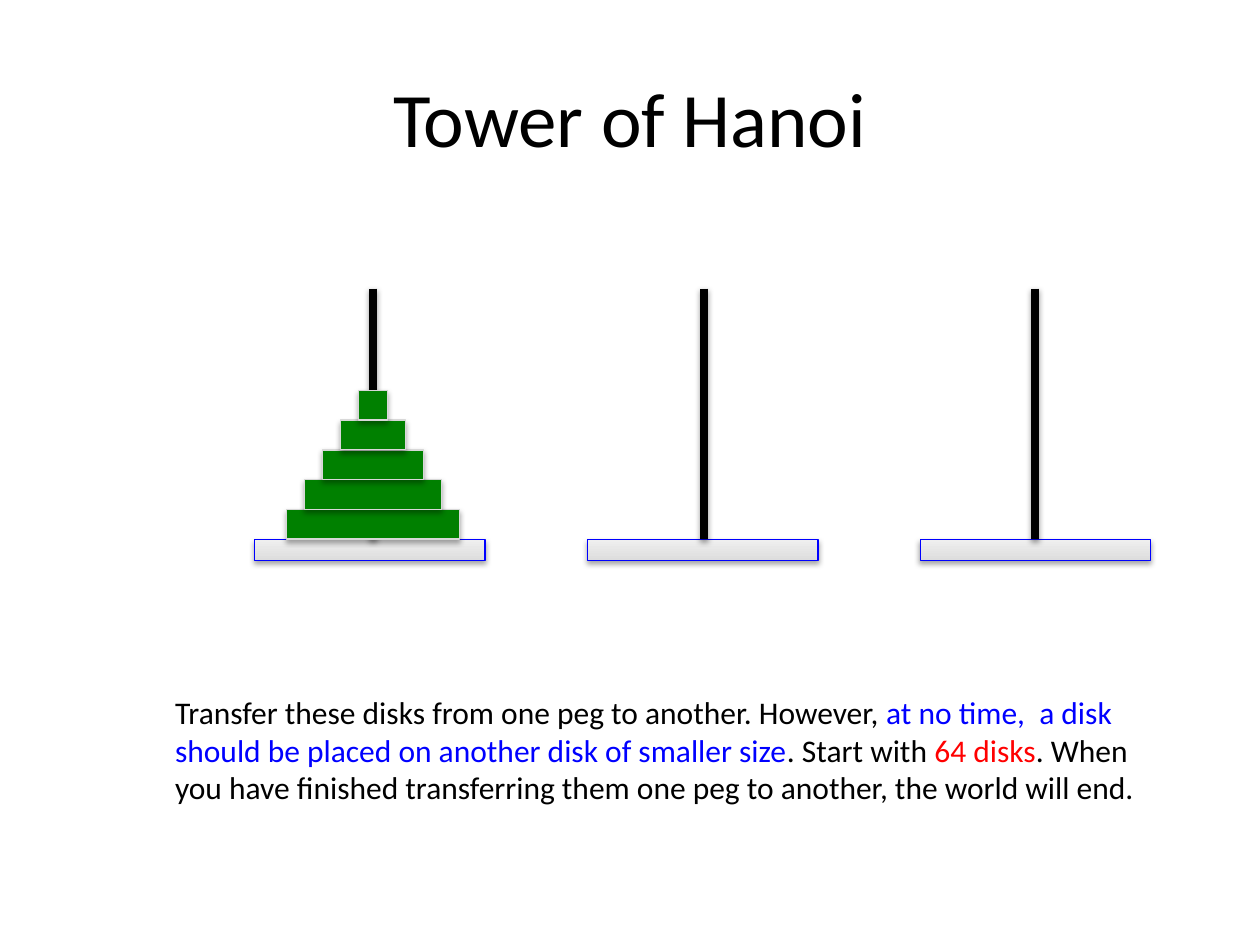
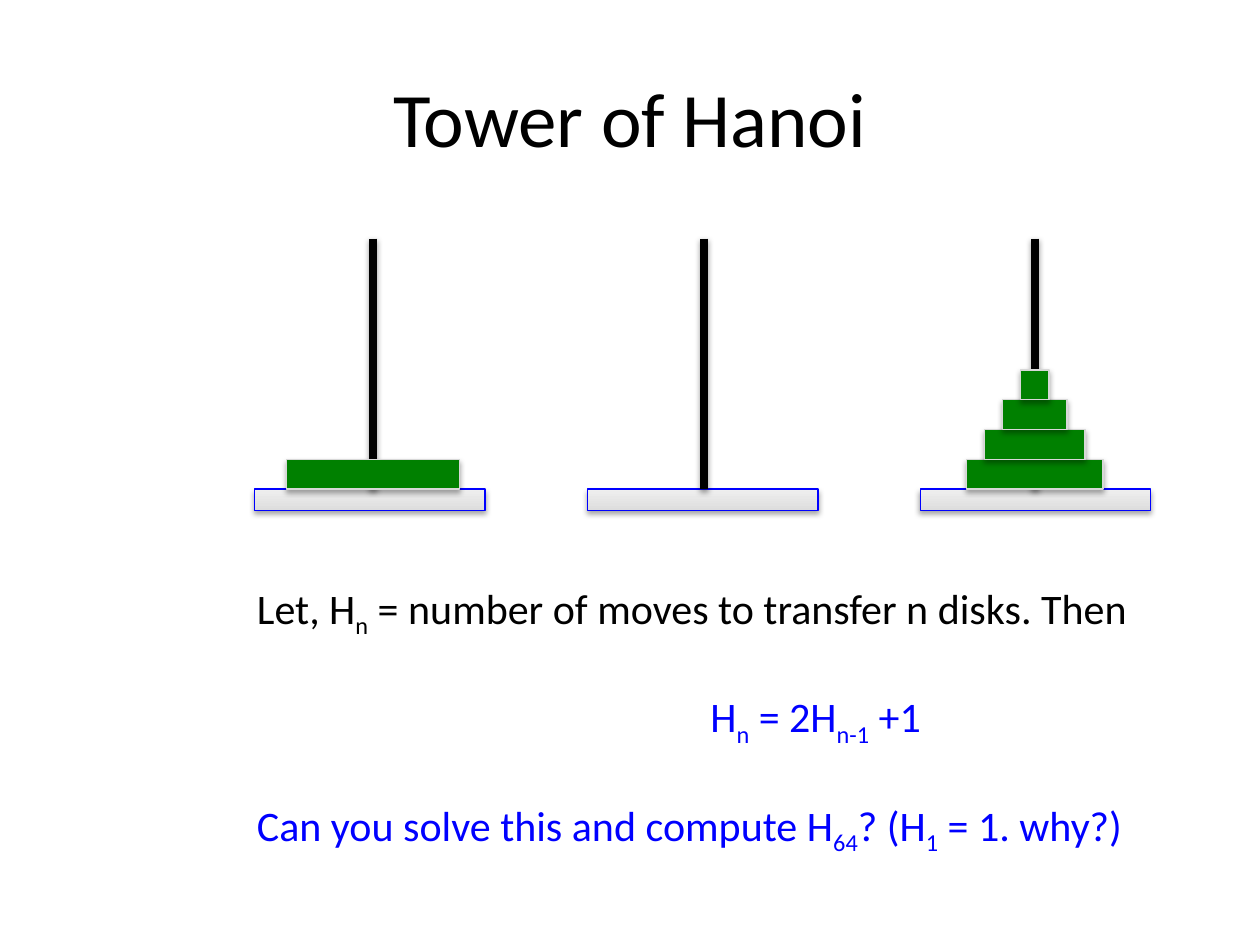
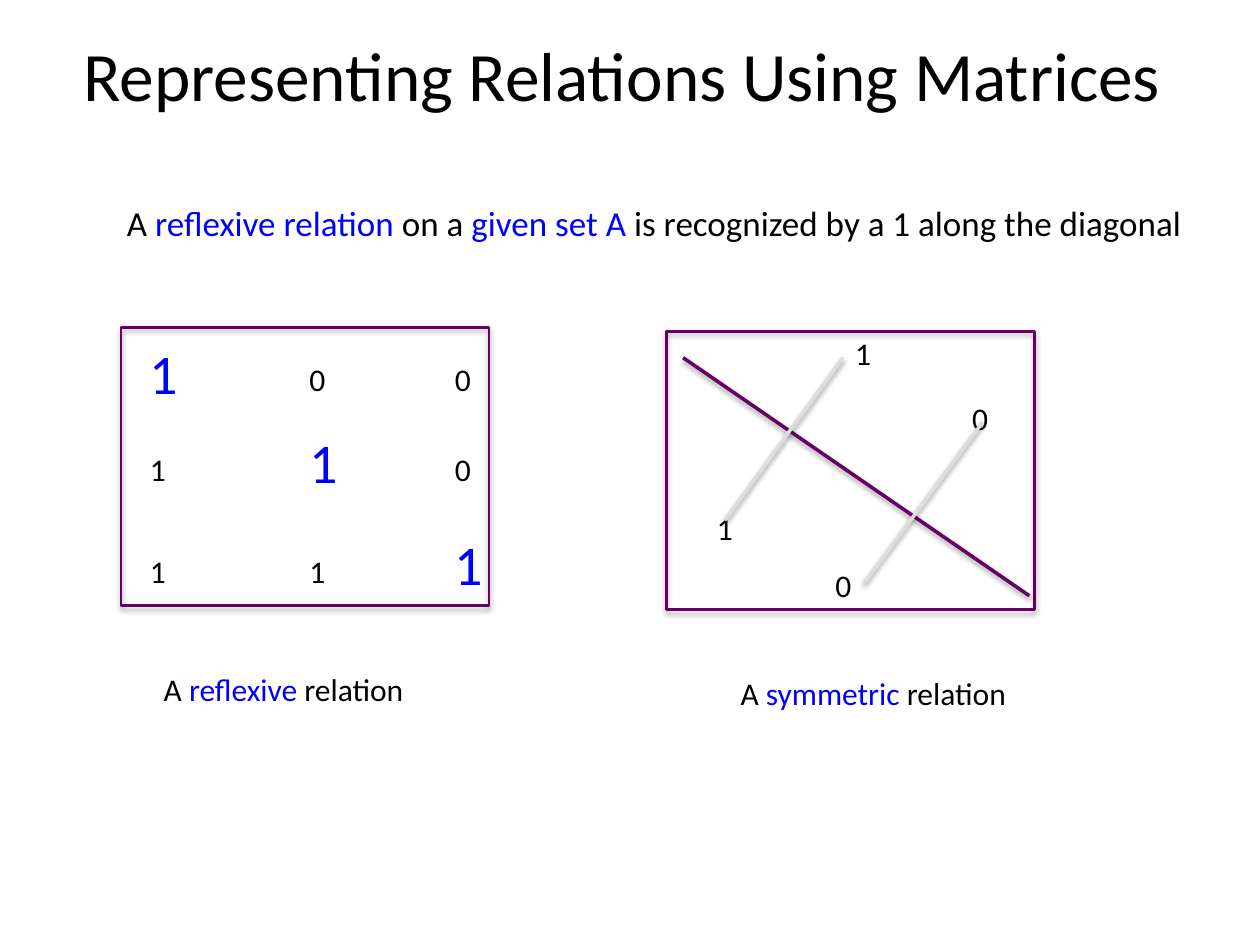
"""Build three slides on the Tower of Hanoi and on relations as matrices."""
from lxml import etree
from pptx import Presentation
from pptx.dml.color import RGBColor
from pptx.enum import shapes, text
from pptx.oxml import ns
from pptx.util import Cm, Pt

FONT = "Calibri"
BLACK = RGBColor(0x00, 0x00, 0x00)
BLUE = RGBColor(0x00, 0x00, 0xFF)
RED = RGBColor(0xFF, 0x00, 0x00)
GREEN = RGBColor(0x00, 0x80, 0x00)
PURPLE = RGBColor(0x66, 0x00, 0x66)
SILVER = RGBColor(0xDD, 0xDD, 0xDD)
PALE = RGBColor(0xEF, 0xEF, 0xEF)
EDGE = RGBColor(0xD8, 0xD8, 0xD8)

TITLE_PLACE = (1.27, 0.76, 22.86, 3.18)
CENTERED = dict(align=text.PP_ALIGN.CENTER, anchor=text.MSO_ANCHOR.MIDDLE)
RECTANGLE = shapes.MSO_SHAPE.RECTANGLE
STRAIGHT = shapes.MSO_CONNECTOR.STRAIGHT


def add_text(page, place, paragraphs, size=18, align=text.PP_ALIGN.LEFT,
             anchor=text.MSO_ANCHOR.TOP, bottom=0.13, gap=0, indents=()):
    """Add a text box; each paragraph lists (words, colour[, subscript]) spans."""
    box = page.shapes.add_textbox(*map(Cm, place))
    frame = box.text_frame
    frame.word_wrap = True
    frame.vertical_anchor = anchor
    frame.margin_bottom = Cm(bottom)
    for index, spans in enumerate(paragraphs):
        para = frame.paragraphs[0] if index == 0 else frame.add_paragraph()
        para.alignment = align
        if index:
            para.space_before = Pt(gap)
        if indents:
            para._p.get_or_add_pPr().set("marL", str(Cm(indents[index])))
        for words, colour, *subscript in spans:
            span = para.add_run()
            span.text = words
            span.font.name = FONT
            span.font.size = Pt(size)
            span.font.color.rgb = colour
            if subscript:
                span.font._element.set("baseline", "-25000")


def outline(shape, colour, width, distance=23000, alpha=35000):
    """Draw the line of a shape or connector and the soft shadow below it."""
    shape.line.color.rgb = colour
    shape.line.width = Pt(width)
    effects = etree.SubElement(shape._element.spPr, ns.qn("a:effectLst"))
    shadow = etree.SubElement(effects, ns.qn("a:outerShdw"), blurRad="40000",
                              dist=str(distance), dir="5400000", rotWithShape="0")
    shade = etree.SubElement(shadow, ns.qn("a:srgbClr"), val=str(BLACK))
    etree.SubElement(shade, ns.qn("a:alpha"), val=str(alpha))


deck = Presentation()
deck.slide_width, deck.slide_height = Cm(25.4), Cm(19.05)
pages = [deck.slides.add_slide(deck.slide_layouts[6]) for _ in range(3)]
hanoi_start, hanoi_moves, matrices = pages

DISK_HEIGHT = 0.6
DISK_WIDTHS = [3.48 - 0.725 * step for step in range(5)]
towers = (
    (hanoi_start, 10.87, (DISK_WIDTHS, [], [])),
    (hanoi_moves, 9.86, (DISK_WIDTHS[:1], [], DISK_WIDTHS[1:])),
)
for page, floor, stacks in towers:
    add_text(page, TITLE_PLACE, [[("Tower of Hanoi", BLACK)]], size=44, **CENTERED)
    for column, stack in enumerate(stacks):
        base = page.shapes.add_shape(RECTANGLE, Cm(5.13 + 6.71 * column), Cm(floor),
                                     Cm(4.65), Cm(0.43))
        base.fill.gradient()
        base.fill.gradient_angle = 90
        for stop, colour in zip(base.fill.gradient_stops, (SILVER, PALE)):
            stop.color.rgb = colour
        outline(base, BLUE, 0.75)

        center = 7.52 + 6.67 * column
        peg = page.shapes.add_connector(STRAIGHT, Cm(center), Cm(floor - 5.05),
                                        Cm(center), Cm(floor))
        outline(peg, BLACK, 4.5, distance=20000, alpha=38000)

        for level, width in enumerate(stack, start=1):
            disk = page.shapes.add_shape(RECTANGLE, Cm(center - width / 2),
                                         Cm(floor - DISK_HEIGHT * level),
                                         Cm(width), Cm(DISK_HEIGHT))
            disk.fill.solid()
            disk.fill.fore_color.rgb = GREEN
            outline(disk, EDGE, 0.75)

add_text(hanoi_start, (3.28, 13.84, 20.2, 2.57), [
    [("Transfer these disks from one peg to another. However, ", BLACK),
     ("at no time,  a disk", BLUE)],
    [("should be placed on another disk of smaller size", BLUE),
     (". Start with ", BLACK), ("64 disks", RED), (". When", BLACK)],
    [("you have finished transferring them one peg to another, "
      "the world will end.", BLACK)],
])

add_text(hanoi_moves, (4.93, 11.61, 18.62, 7.44), [
    [("Let, H", BLACK), ("n", BLACK, True),
     (" = number of moves to transfer n disks. Then", BLACK)],
    [("H", BLUE), ("n", BLUE, True), (" = 2H", BLUE), ("n-1", BLUE, True),
     (" +1", BLUE)],
    [("Can you solve this and compute H", BLUE), ("64", BLUE, True),
     ("? (H", BLUE), ("1", BLUE, True), (" = 1. why?)", BLUE)],
], size=24, gap=29.3, indents=(0, 9.14, 0))

add_text(matrices, TITLE_PLACE, [[("Representing Relations Using Matrices ", BLACK)]],
         size=39.6, bottom=1.84, **CENTERED)
add_text(matrices, (2.31, 3.94, 22, 1.12), [
    [("A ", BLACK), ("reflexive relation ", BLUE), ("on a ", BLACK),
     ("given set A ", BLUE),
     ("is recognized by a 1 along the diagonal", BLACK)],
], size=20)

for left, top in ((2.44, 6.6), (13.44, 6.68)):
    frame = matrices.shapes.add_shape(RECTANGLE, Cm(left), Cm(top), Cm(7.42), Cm(5.61))
    frame.fill.background()
    outline(frame, PURPLE, 1.5)

for row, (top, digits) in enumerate(zip((7.14, 8.94, 11), ("100", "110", "111"))):
    for column, (left, digit) in enumerate(zip((2.77, 5.99, 8.92), digits)):
        if row == column:
            add_text(matrices, (left, top - 0.45, 1.2, 1.63), [[(digit, BLUE)]], size=32)
        else:
            add_text(matrices, (left, top, 0.9, 1.02), [[(digit, BLACK)]])

for left, top, digit in ((16.99, 6.6, "1"), (14.2, 10.13, "1"),
                         (19.35, 7.92, "0"), (16.59, 11.28, "0")):
    add_text(matrices, (left, top, 0.9, 1.02), [[(digit, BLACK)]])

for colour, *ends in ((PURPLE, 13.77, 7.21, 20.75, 12.01),
                      (SILVER, 16.99, 7.21, 14.61, 10.49),
                      (SILVER, 19.81, 8.51, 17.42, 11.76)):
    link = matrices.shapes.add_connector(STRAIGHT, *map(Cm, ends))
    outline(link, colour, 2, distance=20000, alpha=38000)

for left, top, kind in ((14.68, 13.46, "symmetric"), (3.05, 13.39, "reflexive")):
    add_text(matrices, (left, top, 6, 1.02),
             [[("A ", BLACK), (kind, BLUE), (" relation", BLACK)]])

deck.save("out.pptx")
